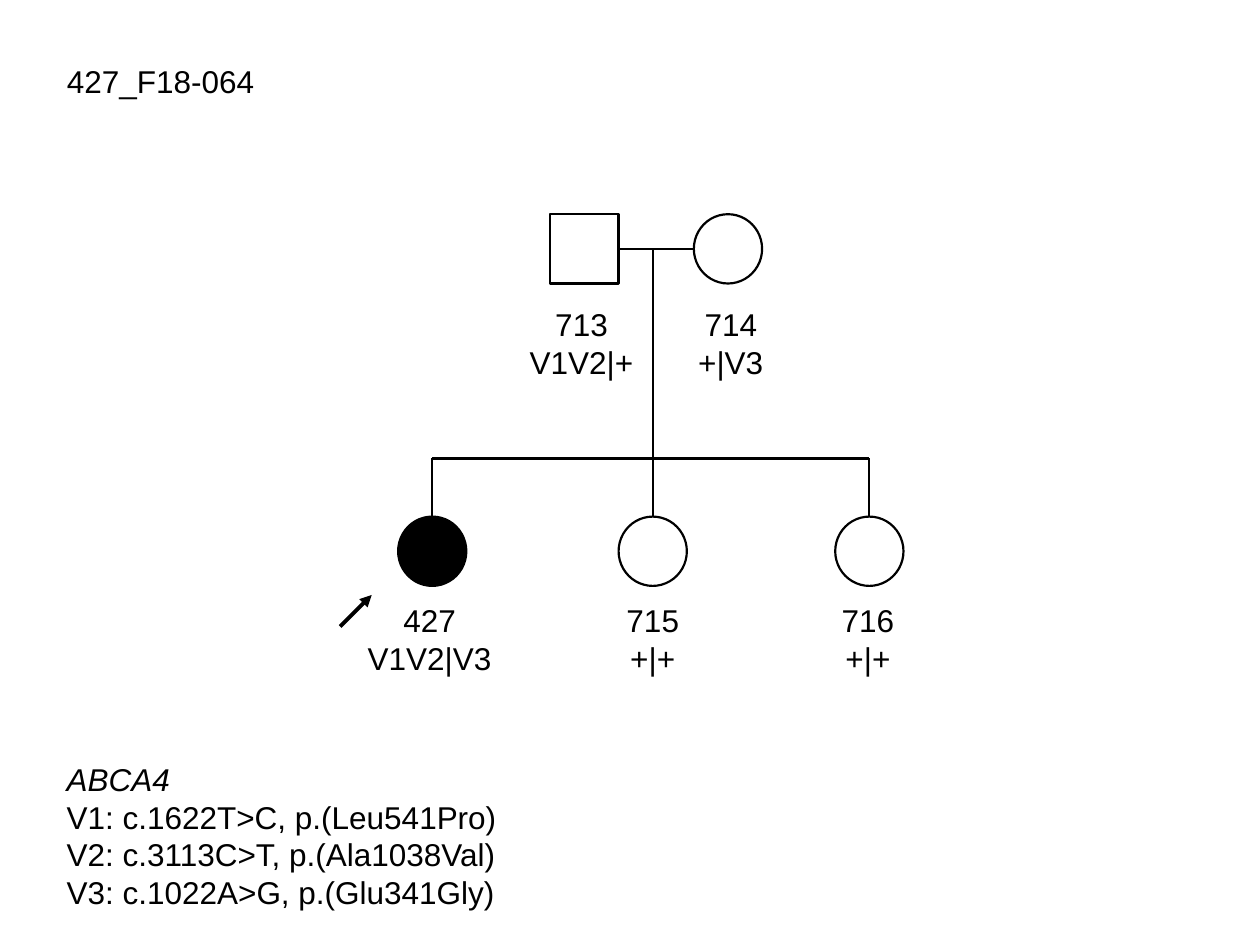
from lxml import etree
from pptx import Presentation
from pptx.dml.color import RGBColor
from pptx.enum.shapes import MSO_CONNECTOR, MSO_SHAPE
from pptx.enum.text import MSO_ANCHOR, MSO_AUTO_SIZE, PP_ALIGN
from pptx.oxml.ns import qn
from pptx.util import Pt

LEFT, CENTER = PP_ALIGN.LEFT, PP_ALIGN.CENTER
CIRCLE, SQUARE = MSO_SHAPE.OVAL, MSO_SHAPE.RECTANGLE
STRAIGHT = MSO_CONNECTOR.STRAIGHT
BLACK = RGBColor(0, 0, 0)
WHITE = RGBColor(255, 255, 255)

# Content: id, genotype, shape, fill, symbol centre x, label centre x
TITLE = "427_F18-064"
PARENTS = [
    ("713", "V1V2|+", SQUARE, None, 334, 332.3),
    ("714", "+|V3", CIRCLE, WHITE, 416, 417.6),
]
CHILDREN = [
    ("427", "V1V2|V3", CIRCLE, BLACK, 247, 245.5),
    ("715", "+|+", CIRCLE, None, 373, 373),
    ("716", "+|+", CIRCLE, None, 496.8, 496),
]
GENE = "ABCA4"
VARIANTS = [
    "V1: c.1622T>C, p.(Leu541Pro)",
    "V2: c.3113C>T, p.(Ala1038Val)",
    "V3: c.1022A>G, p.(Glu341Gly)",
]

# Layout in points
MARGIN = 31
SYMBOL_W, SYMBOL_H = 39, 39.6
PARENT_TOP, CHILD_TOP = 122.4, 295.2
PARENT_LABEL_TOP, CHILD_LABEL_TOP = 170.6, 339.8
LABEL_W, LABEL_H = 100, 51
MARRIAGE_Y = PARENT_TOP + SYMBOL_H / 2
SIBLING_Y = 262


def write_text(sp, lines, align=LEFT, italic_first=False):
    tf = sp.text_frame
    tf.word_wrap = True
    tf.auto_size = MSO_AUTO_SIZE.NONE
    tf.vertical_anchor = MSO_ANCHOR.TOP
    for i, line in enumerate(lines):
        p = tf.paragraphs[0] if i == 0 else tf.add_paragraph()
        p.alignment = align
        p.line_spacing = 1.0
        p.space_before = Pt(0)
        r = p.add_run()
        r.text = line
        r.font.name = "Arial"
        r.font.size = Pt(18)
        r.font.color.rgb = BLACK
        r.font.italic = italic_first and i == 0


def add_text(s, x, y, w, h, lines, **fmt):
    sp = s.shapes.add_textbox(Pt(x), Pt(y), Pt(w), Pt(h))
    write_text(sp, lines, **fmt)


def add_line(s, x1, y1, x2, y2, width=1.25, arrow=False):
    cxn = s.shapes.add_connector(STRAIGHT, Pt(x1), Pt(y1), Pt(x2), Pt(y2))
    cxn.line.color.rgb = BLACK
    cxn.line.width = Pt(width)
    if arrow:
        ln = cxn.line._get_or_add_ln()
        etree.SubElement(ln, qn("a:tailEnd"), type="triangle")
    etree.SubElement(cxn._element.spPr, qn("a:effectLst"))
    return cxn


def add_person(s, person, top, label_top):
    name, genotype, shape, fill, x, label_x = person
    sp = s.shapes.add_shape(shape, Pt(x - SYMBOL_W / 2), Pt(top),
                            Pt(SYMBOL_W), Pt(SYMBOL_H))
    sp.shadow.inherit = False
    if fill is None:
        sp.fill.background()
    else:
        sp.fill.solid()
        sp.fill.fore_color.rgb = fill
    sp.line.color.rgb = BLACK
    sp.line.width = Pt(1.25)
    add_text(s, label_x - LABEL_W / 2, label_top, LABEL_W, LABEL_H,
             [name, genotype], align=CENTER)
    return sp


def main():
    prs = Presentation()
    prs.slide_width, prs.slide_height = Pt(720), Pt(540)
    s = prs.slides.add_slide(prs.slide_layouts[5])

    # Family title
    title = s.shapes.title
    title.left, title.top = Pt(MARGIN), Pt(31.7)
    title.width, title.height = Pt(140), Pt(29)
    write_text(title, [TITLE])

    # Family members
    father, mother = [add_person(s, person, PARENT_TOP, PARENT_LABEL_TOP)
                      for person in PARENTS]
    for person in CHILDREN:
        add_person(s, person, CHILD_TOP, CHILD_LABEL_TOP)

    # Marriage, descent and sibling lines
    child_xs = [person[4] for person in CHILDREN]
    marriage = add_line(s, 353.5, MARRIAGE_Y, mother.left.pt, MARRIAGE_Y, 1.5)
    marriage.begin_connect(father, 3)
    add_line(s, child_xs[1], MARRIAGE_Y, child_xs[1], SIBLING_Y)
    add_line(s, child_xs[0], SIBLING_Y, child_xs[-1], SIBLING_Y, 1.5)
    for x in child_xs:
        add_line(s, x, SIBLING_Y, x, CHILD_TOP)

    # Arrow to the index patient
    add_line(s, 194.4, 358, 212.4, 340, 2.25, arrow=True)

    # Variant key
    add_text(s, MARGIN, 430.6, 470, 94.5, [GENE] + VARIANTS, italic_first=True)

    prs.save("out.pptx")


if __name__ == "__main__":
    main()
